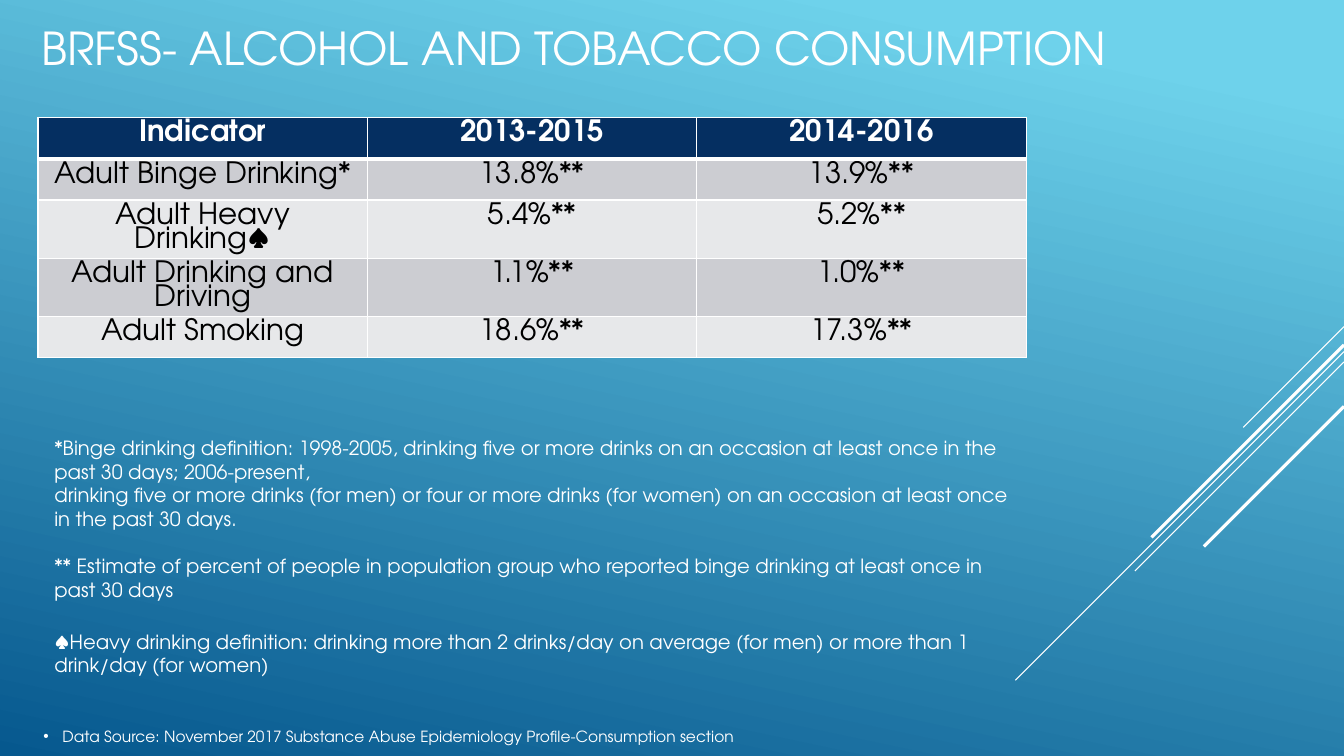
from lxml.etree import SubElement
from pptx import Presentation
from pptx.dml.color import RGBColor
from pptx.enum.shapes import MSO_CONNECTOR
from pptx.enum.text import MSO_ANCHOR, MSO_AUTO_SIZE, PP_ALIGN
from pptx.oxml.ns import qn
from pptx.util import Cm, Pt

FONT = "TeX Gyre Adventor"
COLORS = {
    "white": "FFFFFF",
    "black": "000000",
    "sky": "6ED2EB",
    "ocean": "06588E",
    "navy": "052F61",
    "gray": "CCCDD2",
    "pale": "E7E8EA",
}
WIDTH, HEIGHT = 33.87, 19.05

RAYS = [
    (8.23, 2.54, 0.75),
    (8.86, 8.28, 0.75),
    (9.12, 5.27, 0.75),
    (8.69, 4.85, 2.25),
    (10.24, 3.53, 2.25),
]
INDICATORS = [
    ("Indicator", "2013-2015", "2014-2016"),
    ("Adult Binge Drinking*", "13.8%**", "13.9%**"),
    ("Adult Heavy Drinking♠", "5.4%**", "5.2%**"),
    ("Adult Drinking and Driving", "1.1%**", "1.0%**"),
    ("Adult Smoking", "18.6%**", "17.3%**"),
]
BINGE_NOTES = [
    ("*Binge drinking definition: 1998-2005, drinking five or more drinks on an "
     "occasion at least once in the past 30 days; 2006-present,", 0),
    ("drinking five or more drinks (for men) or four or more drinks (for women) "
     "on an occasion at least once in the past 30 days.", 0),
    ("** Estimate of percent of people in population group who reported binge "
     "drinking at least once in past 30 days", 17),
]
HEAVY_NOTES = [
    ("♠Heavy drinking definition: drinking more than 2 drinks/day on average "
     "(for men) or more than 1 drink/day (for women)", 0),
]
SOURCE = ("Data Source: November 2017 Substance Abuse Epidemiology "
          "Profile-Consumption section")


def rgb(name):
    """Return the named colour."""
    return RGBColor.from_string(COLORS[name])


def write(para, text, size=14, color="white", bold=False,
          align=PP_ALIGN.LEFT, before=0, spacing=1.0):
    """Put one formatted span of text into a paragraph."""
    para.alignment = align
    para.space_before = Pt(before)
    para.line_spacing = spacing
    span = para.add_run()
    span.text = text
    span.font.name = FONT
    span.font.size = Pt(size)
    span.font.bold = bold
    span.font.color.rgb = rgb(color)


class IndicatorPage:
    """A slide with the style of the health indicator deck."""

    def __init__(self, deck):
        """Add a page with a title and a body placeholder."""
        self.page = deck.slides.add_slide(deck.slide_layouts[1])

    def background(self, start, end, angle):
        """Fill the page with a gradient at a clockwise angle."""
        fill = self.page.background.fill
        fill.gradient()
        fill.gradient_angle = 360 - angle
        for stop, color, position in zip(fill.gradient_stops, (start, end), (0.1, 1)):
            stop.color.rgb = rgb(color)
            stop.position = position

    def ray(self, top, reach, weight):
        """Draw a 45 degree line from the right edge down to the left."""
        line = self.page.shapes.add_connector(
            MSO_CONNECTOR.STRAIGHT, Cm(WIDTH), Cm(top),
            Cm(WIDTH - reach), Cm(top + reach))
        line.line.color.rgb = rgb("white")
        line.line.width = Pt(weight)
        SubElement(line._element.spPr, qn("a:effectLst"))

    def place(self, box, left, top, width, height, anchor=MSO_ANCHOR.TOP):
        """Position a text shape and return its frame."""
        box.left, box.top, box.width, box.height = map(Cm, (left, top, width, height))
        frame = box.text_frame
        frame.word_wrap = True
        frame.auto_size = MSO_AUTO_SIZE.NONE
        frame.vertical_anchor = anchor
        return frame

    def title(self, text, *bounds):
        """Fill the title placeholder."""
        frame = self.place(self.page.shapes.title, *bounds, anchor=MSO_ANCHOR.MIDDLE)
        write(frame.paragraphs[0], text, size=32.4)

    def bullet(self, text, *bounds):
        """Fill the body placeholder with one bulleted line."""
        para = self.place(self.page.placeholders[1], *bounds).paragraphs[0]
        write(para, text, size=11)
        props = para._p.get_or_add_pPr()
        indent = Cm(0.48)
        props.set("marL", str(indent))
        props.set("indent", str(-indent))
        SubElement(props, qn("a:buChar"), char="•")

    def notes(self, lines, *bounds):
        """Add a text box with one paragraph per line and its gap above."""
        box = self.page.shapes.add_textbox(0, 0, 0, 0)
        frame = self.place(box, *bounds)
        for index, (text, gap) in enumerate(lines):
            para = frame.add_paragraph() if index else frame.paragraphs[0]
            write(para, text, before=gap)

    def border(self, cell, side, weight):
        """Draw one white edge of a cell."""
        edge = SubElement(cell._tc.get_or_add_tcPr(), qn(f"a:ln{side}"),
                          w=str(Pt(weight)))
        fill = SubElement(edge, qn("a:solidFill"))
        SubElement(fill, qn("a:srgbClr"), val=COLORS["white"])

    def table(self, rows, left, top, column_width, row_height):
        """Add a table with a dark header and banded rows."""
        columns = len(rows[0])
        grid = self.page.shapes.add_table(
            len(rows), columns, Cm(left), Cm(top),
            Cm(column_width * columns), Cm(row_height * len(rows))).table
        for column in grid.columns:
            column.width = Cm(column_width)
        for r, values in enumerate(rows):
            grid.rows[r].height = Cm(row_height)
            header = r == 0
            band = "navy" if header else ("pale", "gray")[r % 2]
            for c, text in enumerate(values):
                cell = grid.cell(r, c)
                for side in "LRTB":
                    thick = (r, side) in ((0, "B"), (1, "T"))
                    self.border(cell, side, 3 if thick else 1)
                cell.fill.solid()
                cell.fill.fore_color.rgb = rgb(band)
                write(cell.text_frame.paragraphs[0], text, size=21, bold=header,
                      color="white" if header else "black",
                      align=PP_ALIGN.CENTER, spacing=0.88)


def main():
    """Build the deck and save it."""
    deck = Presentation()
    deck.slide_width, deck.slide_height = Cm(WIDTH), Cm(HEIGHT)
    page = IndicatorPage(deck)
    page.background("sky", "ocean", 102)
    for ray in RAYS:
        page.ray(*ray)
    page.title("BRFSS- ALCOHOL AND TOBACCO CONSUMPTION", 0.79, 0.49, 29.77, 1.4)
    page.table(INDICATORS, 0.96, 2.96, 8.3, 1.04)
    page.notes(BINGE_NOTES, 1.12, 10.87, 24.59, 4.45)
    page.notes(HEAVY_NOTES, 1.12, 15.74, 25.58, 1.45)
    page.bullet(SOURCE, 0.84, 18.19, 31.85, 0.74)
    deck.save("out.pptx")


if __name__ == "__main__":
    main()
